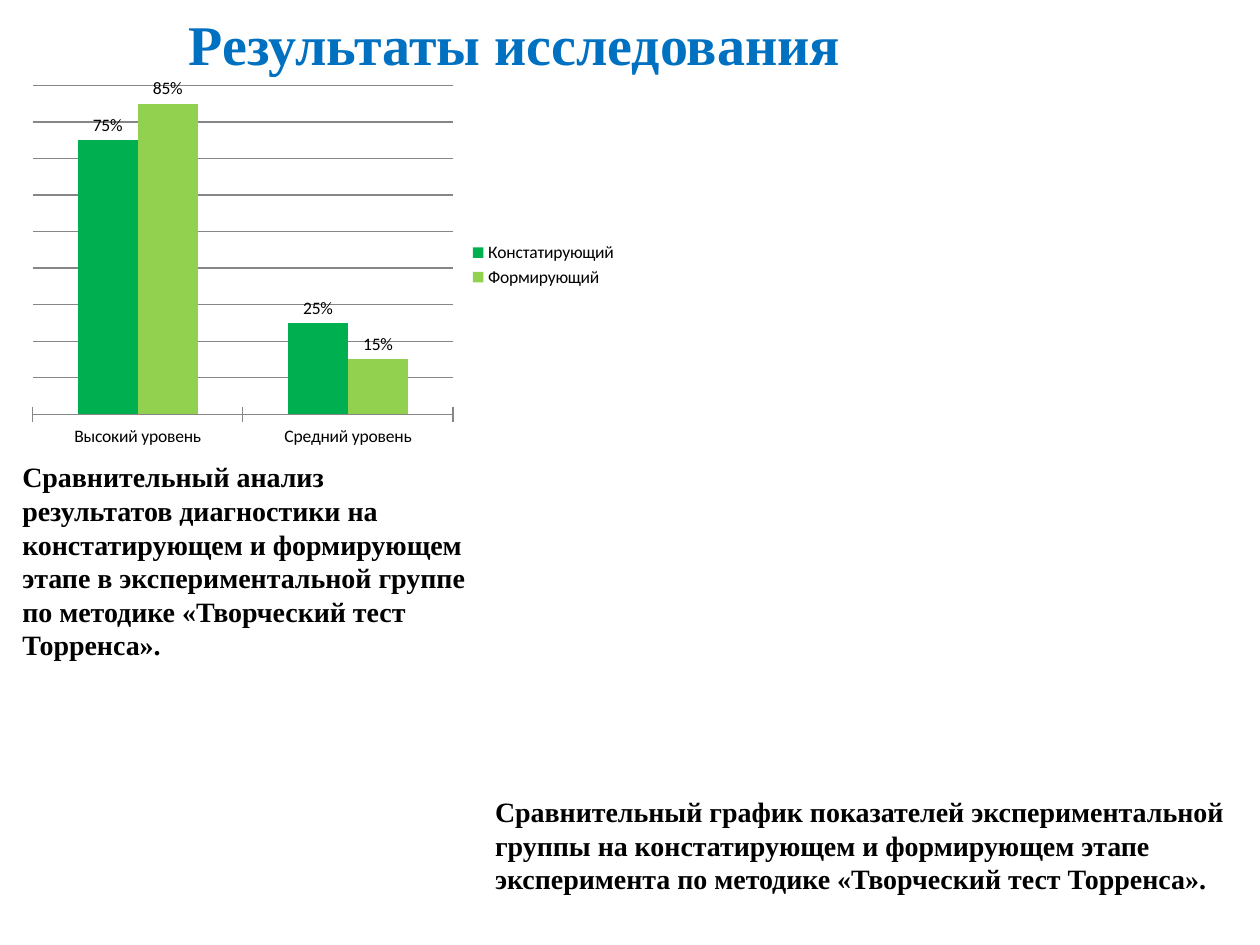
import pptx
import pptx.chart.data
import pptx.dml.color
import pptx.enum.chart
import pptx.enum.text
import pptx.oxml
import pptx.oxml.ns
import pptx.util
from pptx.util import Cm

RGBColor = pptx.dml.color.RGBColor
BLACK = RGBColor(0x00, 0x00, 0x00)
WHITE = RGBColor(0xFF, 0xFF, 0xFF)
BLUE = RGBColor(0x00, 0x70, 0xC0)
GREEN = RGBColor(0x00, 0xB0, 0x50)
LIGHT_GREEN = RGBColor(0x92, 0xD0, 0x50)
GRAY = RGBColor(0x86, 0x86, 0x86)

TITLE_ONLY = 5
CATEGORIES = ["Высокий уровень", "Средний уровень"]
SERIES = [
    ("Констатирующий", (0.75, 0.25), GREEN),
    ("Формирующий", (0.85, 0.15), LIGHT_GREEN),
]
PLOT_LAYOUT = {"x": 0.02, "y": 0.02, "w": 0.69, "h": 0.88}


def write_text(shape, text, size=16, color=BLACK, align=pptx.enum.text.PP_ALIGN.LEFT):
    frame = shape.text_frame
    frame.word_wrap = True
    frame.vertical_anchor = pptx.enum.text.MSO_ANCHOR.MIDDLE
    para = frame.paragraphs[0]
    para.alignment = align
    span = para.add_run()
    span.text = text
    span.font.name = "Times New Roman"
    span.font.size = pptx.util.Pt(size)
    span.font.bold = True
    span.font.color.rgb = color


def add_title(page, text):
    title = page.shapes.title
    title.left, title.top, title.width, title.height = Cm(0), Cm(0), Cm(20.75), Cm(1.75)
    write_text(title, text, size=32, color=BLUE, align=pptx.enum.text.PP_ALIGN.CENTER)
    title.text_frame.auto_size = pptx.enum.text.MSO_AUTO_SIZE.NONE


def add_caption(page, text, left, top, width, height):
    box = page.shapes.add_textbox(left, top, width, height)
    write_text(box, text)
    box.text_frame.auto_size = pptx.enum.text.MSO_AUTO_SIZE.SHAPE_TO_FIT_TEXT


def fix_plot_area(chart):
    """Place the inner plot area at fixed fractions of the chart."""
    qn = pptx.oxml.ns.qn
    plot_area = chart._chartSpace.chart.plotArea
    for old in plot_area.findall(qn("c:layout")):
        plot_area.remove(old)
    modes = '<c:xMode val="edge"/><c:yMode val="edge"/>'
    sizes = "".join(f'<c:{key} val="{value}"/>' for key, value in PLOT_LAYOUT.items())
    plot_area.insert(0, pptx.oxml.parse_xml(
        f'<c:layout {pptx.oxml.ns.nsdecls("c")}><c:manualLayout>'
        f'<c:layoutTarget val="inner"/>{modes}{sizes}</c:manualLayout></c:layout>'))


def format_axes(chart):
    category_axis = chart.category_axis
    category_axis.major_tick_mark = pptx.enum.chart.XL_TICK_MARK.CROSS
    category_axis.format.line.color.rgb = GRAY
    value_axis = chart.value_axis
    value_axis.minimum_scale = 0
    value_axis.maximum_scale = 0.9
    value_axis.major_unit = 0.1
    value_axis.tick_labels.number_format = "0%"
    value_axis.tick_labels.number_format_is_linked = False
    value_axis.major_gridlines.format.line.color.rgb = GRAY
    value_axis.visible = False


def add_results_chart(page, left, top, width, height):
    chart_data = pptx.chart.data.CategoryChartData(number_format="0%")
    chart_data.categories = CATEGORIES
    for name, values, _ in SERIES:
        chart_data.add_series(name, values)
    chart = page.shapes.add_chart(
        pptx.enum.chart.XL_CHART_TYPE.COLUMN_CLUSTERED,
        left, top, width, height, chart_data).chart
    chart.font.name = "Calibri"
    chart.font.size = pptx.util.Pt(10)
    chart.font.color.rgb = BLACK
    chart.has_title = False
    chart.has_legend = True
    chart.legend.position = pptx.enum.chart.XL_LEGEND_POSITION.RIGHT
    chart.legend.include_in_layout = False

    plot = chart.plots[0]
    plot.gap_width = 150
    plot.overlap = 0
    plot.vary_by_categories = False
    for series, (_, _, color) in zip(plot.series, SERIES):
        series.format.fill.solid()
        series.format.fill.fore_color.rgb = color
        labels = series.data_labels
        labels.show_value = True
        labels.number_format = "0%"
        labels.number_format_is_linked = False
        labels.position = pptx.enum.chart.XL_LABEL_POSITION.OUTSIDE_END
    format_axes(chart)
    fix_plot_area(chart)


def main():
    deck = pptx.Presentation()
    deck.slide_width, deck.slide_height = Cm(25.4), Cm(19.05)
    page = deck.slides.add_slide(deck.slide_layouts[TITLE_ONLY])
    page.background.fill.solid()
    page.background.fill.fore_color.rgb = WHITE

    add_title(page, "Результаты исследования")
    add_results_chart(page, Cm(0.41), Cm(1.57), Cm(12.29), Cm(7.54))
    add_caption(
        page,
        "Сравнительный график показателей экспериментальной группы на констатирующем "
        "и формирующем этапе эксперимента по методике «Творческий тест Торренса».",
        Cm(9.73), Cm(15.88), Cm(15.29), Cm(2.31))
    add_caption(
        page,
        "Сравнительный анализ результатов диагностики на констатирующем и формирующем "
        "этапе в экспериментальной группе по методике «Творческий тест Торренса».",
        Cm(0.2), Cm(9.12), Cm(9.53), Cm(4.37))
    deck.save("out.pptx")


if __name__ == "__main__":
    main()
